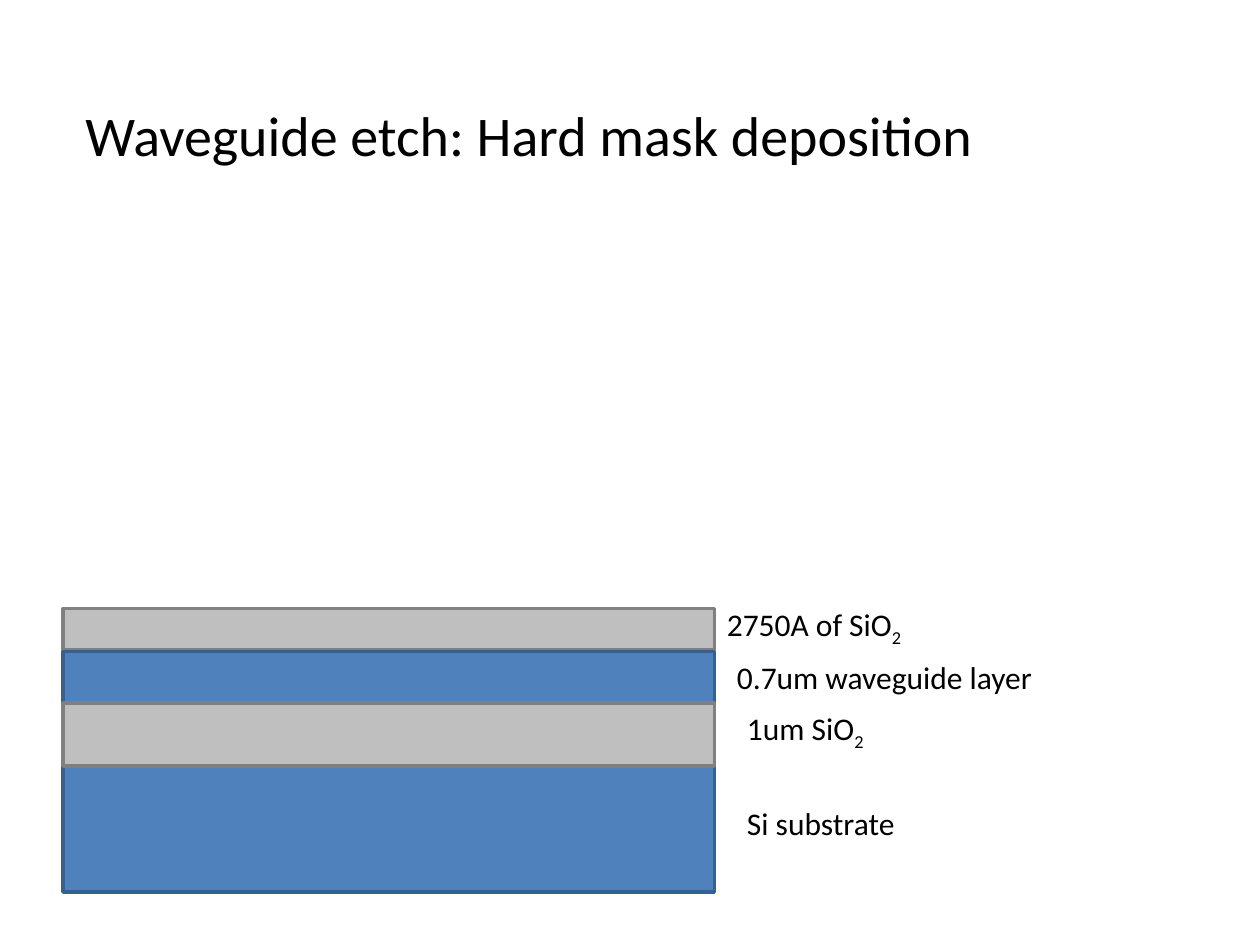
from dataclasses import dataclass

from pptx import Presentation
from pptx.dml.color import RGBColor
from pptx.enum.shapes import MSO_SHAPE
from pptx.enum.text import MSO_AUTO_SIZE
from pptx.slide import Slide
from pptx.util import Inches, Pt


@dataclass(frozen=True)
class Material:
    fill: RGBColor
    outline: RGBColor


@dataclass(frozen=True)
class Theme:
    font: str = "Calibri"
    text: RGBColor = RGBColor(0x00, 0x00, 0x00)
    title_size: int = 32
    label_size: int = 18
    outline_width: int = 2
    silicon: Material = Material(RGBColor(0x4F, 0x81, 0xBD), RGBColor(0x37, 0x60, 0x92))
    oxide: Material = Material(RGBColor(0xBF, 0xBF, 0xBF), RGBColor(0x80, 0x80, 0x80))


@dataclass(frozen=True)
class Label:
    text: str
    left: float
    top: float
    width: float
    subscript: str = ""


@dataclass(frozen=True)
class Layer:
    top: float
    height: float
    material: Material
    label: Label


THEME = Theme()
STACK_LEFT, STACK_WIDTH = 0.5, 5.17
LABEL_HEIGHT = 0.4

# Back to front: each outline overlaps the layers listed before it.
LAYERS = [
    Layer(6.08, 1, THEME.silicon, Label("Si substrate", 5.83, 6.33, 1.38)),
    Layer(4.83, 0.33, THEME.oxide, Label("2750A of SiO", 5.67, 4.75, 1.65, "2")),
    Layer(5.17, 0.42, THEME.silicon, Label("0.7um waveguide layer", 5.75, 5.17, 2.57)),
    Layer(5.58, 0.5, THEME.oxide, Label("1um SiO", 5.83, 5.58, 1.19, "2")),
]


def draw_text(slide: Slide, label: Label, height: float, size: int, wrap: bool) -> None:
    frame = slide.shapes.add_textbox(
        Inches(label.left), Inches(label.top), Inches(label.width), Inches(height)
    ).text_frame
    frame.word_wrap = wrap
    frame.auto_size = MSO_AUTO_SIZE.SHAPE_TO_FIT_TEXT
    paragraph = frame.paragraphs[0]
    paragraph.font.name = THEME.font
    paragraph.font.size = Pt(size)
    paragraph.font.color.rgb = THEME.text
    paragraph.add_run().text = label.text
    if label.subscript:
        subscript = paragraph.add_run()
        subscript.text = label.subscript
        subscript.font._element.set("baseline", "-25000")


def draw_layer(slide: Slide, layer: Layer) -> None:
    slab = slide.shapes.add_shape(
        MSO_SHAPE.RECTANGLE,
        Inches(STACK_LEFT), Inches(layer.top), Inches(STACK_WIDTH), Inches(layer.height),
    )
    slab.shadow.inherit = False
    slab.fill.solid()
    slab.fill.fore_color.rgb = layer.material.fill
    slab.line.color.rgb = layer.material.outline
    slab.line.width = Pt(THEME.outline_width)


def main() -> None:
    presentation = Presentation()
    presentation.slide_width = Inches(10)
    presentation.slide_height = Inches(7.5)
    slide = presentation.slides.add_slide(presentation.slide_layouts[6])

    title = Label("Waveguide etch: Hard mask deposition", 0.58, 0.75, 8.83)
    draw_text(slide, title, 0.64, THEME.title_size, wrap=True)
    for layer in LAYERS:
        draw_layer(slide, layer)
    for layer in LAYERS:
        draw_text(slide, layer.label, LABEL_HEIGHT, THEME.label_size, wrap=False)

    presentation.save("out.pptx")


if __name__ == "__main__":
    main()
